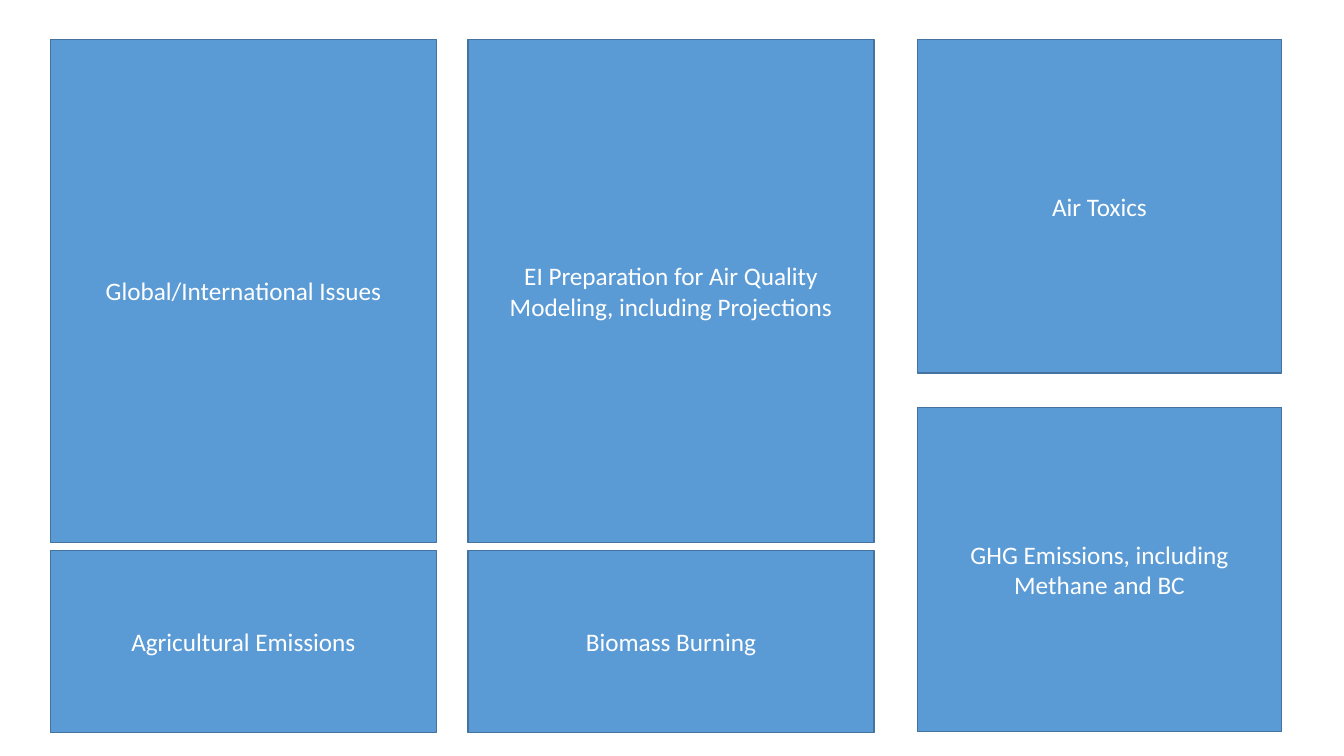
import pptx
import pptx.util
import pptx.dml.color
import pptx.enum.shapes
import pptx.enum.text
from dataclasses import dataclass

# Content: each column holds its topics from top to bottom
TOPICS = [
    ["Global/International Issues", "Agricultural Emissions"],
    ["EI Preparation for Air Quality Modeling, including Projections", "Biomass Burning"],
    ["Air Toxics", "GHG Emissions, including Methane and BC"],
]

# Grid in inches: columns are (left, width), rows are (top, height)
SLIDE_SIZE = (13.33, 7.5)
COLUMNS = [(0.5, 3.83), (4.64, 4.03), (9.1, 3.61)]
TALL_ROWS = [(0.39, 4.99), (5.46, 1.81)]
EVEN_ROWS = [(0.39, 3.31), (4.04, 3.22)]
COLUMN_ROWS = [TALL_ROWS, TALL_ROWS, EVEN_ROWS]


@dataclass(frozen=True)
class Theme:
    fill: str = "5B9BD5"
    outline: str = "43739E"
    text: str = "FFFFFF"
    font: str = "Calibri"
    text_size: float = 18
    line_width: float = 1


THEME = Theme()


def color(code):
    return pptx.dml.color.RGBColor.from_string(code)


def add_topic(page, topic, column, row):
    (left, width), (top, height) = column, row
    box = page.shapes.add_shape(
        pptx.enum.shapes.MSO_SHAPE.RECTANGLE,
        *(pptx.util.Inches(length) for length in (left, top, width, height)))
    box.shadow.inherit = False
    box.fill.solid()
    box.fill.fore_color.rgb = color(THEME.fill)
    box.line.color.rgb = color(THEME.outline)
    box.line.width = pptx.util.Pt(THEME.line_width)

    # Centred label
    frame = box.text_frame
    frame.text = topic
    frame.word_wrap = True
    frame.vertical_anchor = pptx.enum.text.MSO_ANCHOR.MIDDLE
    para = frame.paragraphs[0]
    para.alignment = pptx.enum.text.PP_ALIGN.CENTER
    font = para.runs[0].font
    font.name = THEME.font
    font.size = pptx.util.Pt(THEME.text_size)
    font.color.rgb = color(THEME.text)


def main():
    deck = pptx.Presentation()
    deck.slide_width, deck.slide_height = map(pptx.util.Inches, SLIDE_SIZE)
    page = deck.slides.add_slide(deck.slide_layouts[6])

    # Topic boxes, column by column
    for topics, column, rows in zip(TOPICS, COLUMNS, COLUMN_ROWS):
        for topic, row in zip(topics, rows):
            add_topic(page, topic, column, row)
    deck.save("out.pptx")


if __name__ == "__main__":
    main()
